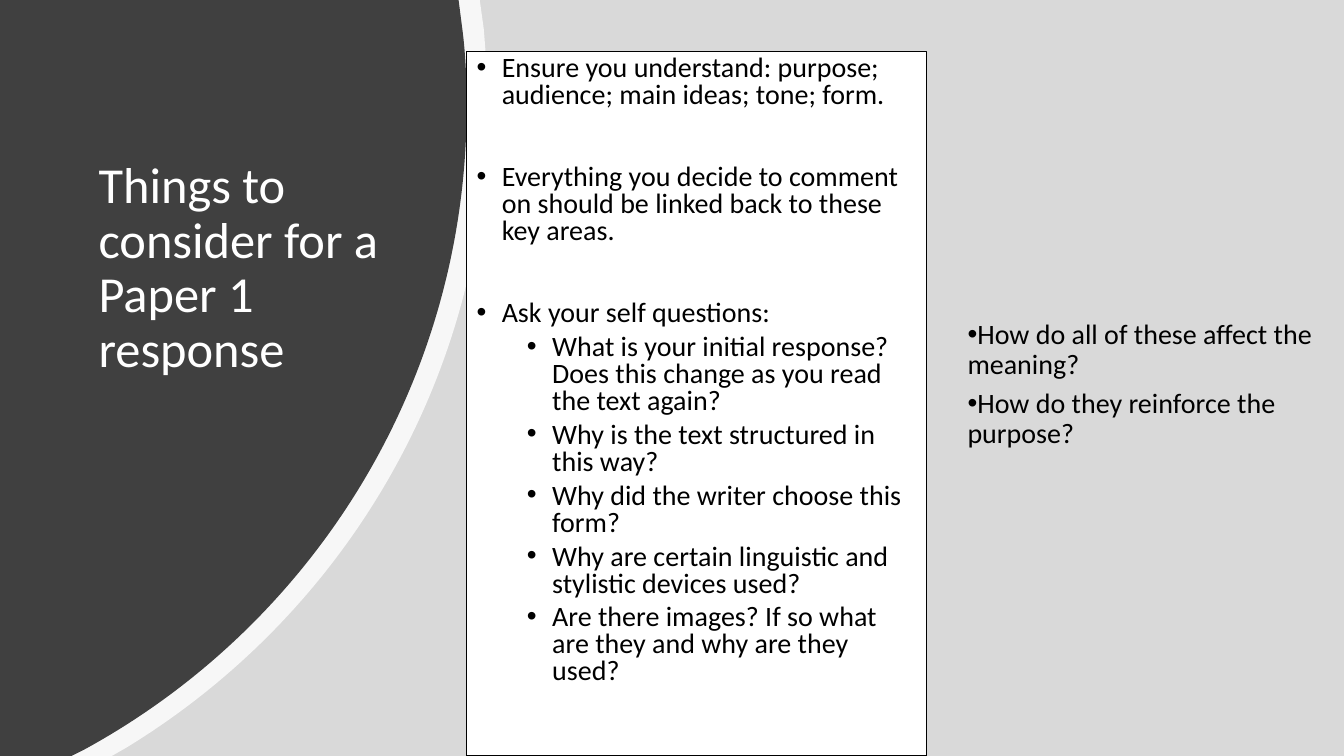
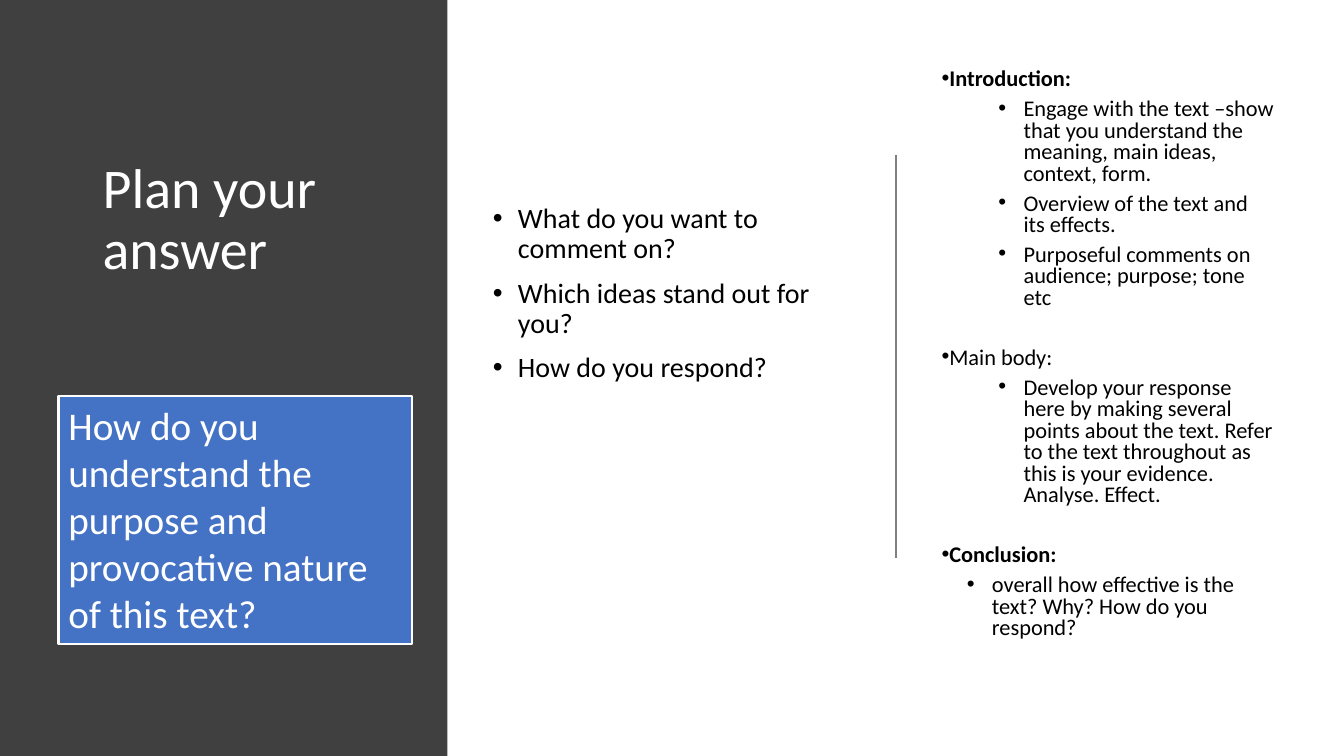
from copy import deepcopy
from dataclasses import dataclass

from lxml.etree import SubElement
from pptx import Presentation
from pptx.dml.color import RGBColor
from pptx.enum.shapes import MSO_CONNECTOR as Connector, MSO_SHAPE as Shape
from pptx.enum.text import MSO_ANCHOR as Anchor, MSO_AUTO_SIZE as AutoSize, PP_ALIGN as Align
from pptx.oxml.ns import qn
from pptx.util import Pt

PX = 3048
WIDTH, HEIGHT = 4000, 2250
FONT = "Calibri"
WHITE = RGBColor(0xFF, 0xFF, 0xFF)
BLACK = RGBColor(0x00, 0x00, 0x00)
CHARCOAL = RGBColor(0x40, 0x40, 0x40)
PALE_GREY = RGBColor(0xD9, 0xD9, 0xD9)
RULE_GREY = RGBColor(0x80, 0x80, 0x80)
BLUE = RGBColor(0x44, 0x72, 0xC4)
HANGING = 75


@dataclass
class Item:
    """One paragraph: its wording, bullet margin in px and spacing in points."""
    text: str
    margin: int | None = None
    level: int = 0
    before: float = 0
    after: float = 0
    bold: bool = False


CHECKLIST = [
    Item("Ensure you understand: purpose; audience; main ideas; tone; form.", 75),
    Item("Everything you decide to comment on should be linked back to these key areas.",
         75, before=39.5),
    Item("Ask your self questions:", 75, before=39.5),
] + [Item(question, 225, level=1, before=5) for question in (
    "What is your initial response? Does this change as you read the text again?",
    "Why is the text structured in this way?",
    "Why did the writer choose this form?",
    "Why are certain linguistic and stylistic devices used?",
    "Are there images? If so what are they and why are they used?",
)]

FOLLOW_UPS = [
    Item("How do all of these affect the meaning?", 0, after=6),
    Item("How do they reinforce the purpose?", 0, after=6),
]

PROMPTS = [
    Item("What do you want to comment on?", 75),
    Item("Which ideas stand out for you?", 75, before=10),
    Item("How do you respond?", 75, before=10),
]

ESSAY_PLAN = [
    Item("Introduction:", 0, after=6, bold=True),
    Item("Engage with the text –show that you understand the meaning, main ideas, "
         "context, form.", 244, level=1, after=6),
    Item("Overview of the text and its effects.", 244, level=1, after=6),
    Item("Purposeful comments on audience; purpose; tone etc", 244, level=1, after=27.5),
    Item("Main body:", 0, after=6),
    Item("Develop your response here by making several points about the text. Refer to "
         "the text throughout as this is your evidence. Analyse. Effect.",
         244, level=1, after=27.5),
    Item("Conclusion:", 0, after=6, bold=True),
    Item("overall how effective is the text? Why? How do you respond?", 150, level=1),
]


def px(*lengths):
    """Turn px lengths into EMU."""
    return [length * PX for length in lengths]


def add_bullet(paragraph, margin):
    """Give a paragraph a round bullet with a hanging indent."""
    properties = paragraph._p.get_or_add_pPr()
    properties.set("marL", str(margin * PX))
    properties.set("indent", str(-HANGING * PX))
    SubElement(properties, qn("a:buFont")).set("typeface", "Arial")
    SubElement(properties, qn("a:buChar")).set("char", "•")


def write_items(frame, items, size, color, spacing):
    """Write items into a text frame in one size and colour."""
    frame.word_wrap = True
    frame.vertical_anchor = Anchor.TOP
    for index, item in enumerate(items):
        paragraph = frame.add_paragraph() if index else frame.paragraphs[0]
        paragraph.text = item.text
        paragraph.level = item.level
        paragraph.alignment = Align.LEFT
        if item.margin is not None:
            add_bullet(paragraph, item.margin)
        paragraph.line_spacing = spacing
        paragraph.space_before = Pt(item.before)
        paragraph.space_after = Pt(item.after)
        font = paragraph.font
        font.name, font.size, font.bold = FONT, Pt(size), item.bold
        font.color.rgb = color


def add_text(slide, box, items, size, color=BLACK, spacing=0.9):
    """Add a plain text box."""
    frame = slide.shapes.add_textbox(*px(*box)).text_frame
    write_items(frame, items, size, color, spacing)


def add_title(slide, box, title, size):
    """Add the white slide title."""
    add_text(slide, box, [Item(title)], size, WHITE)


def paint(shape, fill, outline=None, weight=1.0):
    """Set fill and outline and drop the shadow."""
    shape.shadow.inherit = False
    shape.fill.solid()
    shape.fill.fore_color.rgb = fill
    if outline is None:
        shape.line.fill.background()
    else:
        shape.line.color.rgb = outline
        shape.line.width = Pt(weight)


def add_panel(slide, box, fill, outline=None, weight=1.0):
    """Add a filled rectangle."""
    panel = slide.shapes.add_shape(Shape.RECTANGLE, *px(*box))
    paint(panel, fill, outline, weight)
    return panel


def bend(segment, controls):
    """Turn a straight path segment into a cubic curve."""
    end = segment[0]
    for index, (x, y) in enumerate(controls):
        control = deepcopy(end)
        control.set("x", str(x))
        control.set("y", str(y))
        segment.insert(index, control)
    segment.tag = qn("a:cubicBezTo")


def add_arc_panel(slide, top, shoulder, upper, lower, bottom, fill, opacity=100):
    """Add a panel from the left edge to a bowed right side."""
    outline = [(top, 0), shoulder, upper[-1], lower[-1], (bottom, HEIGHT), (0, HEIGHT)]
    builder = slide.shapes.build_freeform(0, 0, scale=PX)
    builder.add_line_segments(outline, close=True)
    panel = builder.convert_to_shape()
    segments = list(panel._element.spPr.iter(qn("a:lnTo")))
    for segment, (*controls, _) in zip(segments[2:4], (upper, lower)):
        bend(segment, controls)
    paint(panel, fill)
    if opacity < 100:
        tint = panel._element.spPr.find(qn("a:solidFill"))[0]
        SubElement(tint, qn("a:alpha")).set("val", str(opacity * 1000))


def add_divider(slide, x, top, bottom):
    """Add a thin vertical rule."""
    rule = slide.shapes.add_connector(Connector.STRAIGHT, *px(x, top, x, bottom))
    rule.line.color.rgb = RULE_GREY
    rule.line.width = Pt(1)
    SubElement(rule._element.spPr, qn("a:effectLst"))


def build_considerations(slide):
    """Build the slide on what to consider."""
    add_panel(slide, (0, 0, WIDTH, HEIGHT), PALE_GREY)
    add_arc_panel(slide, 1428, (1440, 87), ((1446, 162), (1452, 240), (1452, 315)),
                  ((1452, 1125), (1020, 1833), (375, 2226)), 333, WHITE, opacity=80)
    add_arc_panel(slide, 1365, (1377, 93), ((1386, 165), (1389, 240), (1389, 315)),
                  ((1389, 1143), (927, 1863), (249, 2232)), 213, CHARCOAL)
    add_title(slide, (264, 462, 942, 708), "Things to consider for a Paper 1 response", 36)
    checklist = add_panel(slide, (1389, 153, 1368, 2097), WHITE, BLACK)
    write_items(checklist.text_frame, CHECKLIST, 20, BLACK, 0.8)
    add_text(slide, (2850, 939, 1150, 465), FOLLOW_UPS, 20)


def build_plan(slide):
    """Build the slide on planning the answer."""
    add_panel(slide, (0, 0, 1332, HEIGHT), CHARCOAL)
    add_title(slide, (276, 462, 951, 1431), "Plan your answer", 40)
    add_text(slide, (1437, 594, 1125, 1431), PROMPTS, 20)
    add_divider(slide, 2667, 462, 1662)
    add_text(slide, (2773, 192, 1049, 1902), ESSAY_PLAN, 16, spacing=0.8)
    question = add_panel(slide, (174, 1179, 1053, 738), BLUE, WHITE, 1.5)
    write_items(question.text_frame, [Item(
        "How do you understand the purpose and provocative nature of this text?")],
        28, WHITE, 1.0)
    question.text_frame.auto_size = AutoSize.SHAPE_TO_FIT_TEXT


def main():
    """Build and save the presentation."""
    deck = Presentation()
    deck.slide_width, deck.slide_height = px(WIDTH, HEIGHT)
    blank = deck.slide_layouts[6]
    for build in (build_considerations, build_plan):
        build(deck.slides.add_slide(blank))
    deck.save("out.pptx")


if __name__ == "__main__":
    main()
